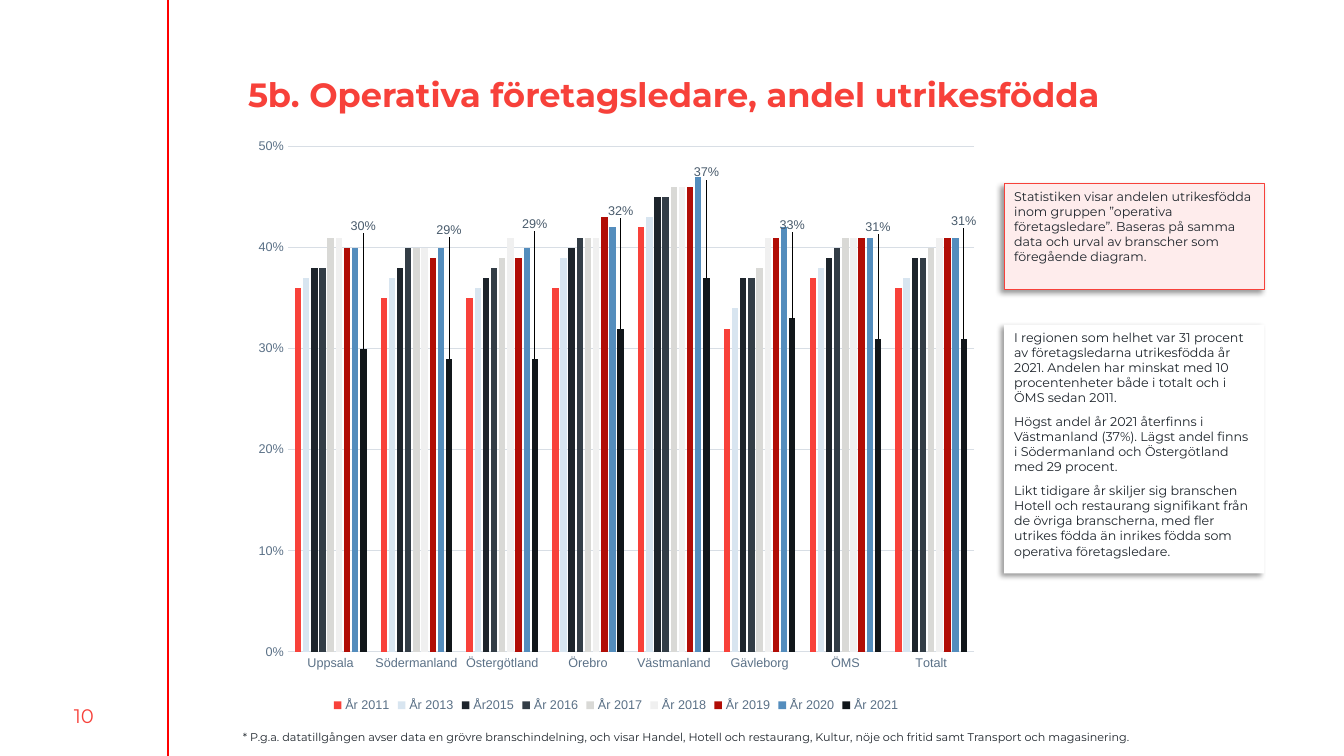
from dataclasses import dataclass

from lxml import etree
from pptx import Presentation
from pptx import util as u
from pptx.chart.data import CategoryChartData
from pptx.dml.color import RGBColor
from pptx.enum import chart as ch, shapes, text
from pptx.oxml import parse_xml
from pptx.oxml.ns import nsdecls, qn

TITLE = "5b. Operativa företagsledare, andel utrikesfödda"
PAGE_NUMBER = "10"
SOURCE_NOTE = ["Statistiken visar andelen utrikesfödda inom gruppen ”operativa företagsledare”. "
               "Baseras på samma data och urval av branscher som föregående diagram."]
FINDINGS = [
    "I regionen som helhet var 31 procent av företagsledarna utrikesfödda år 2021. "
    "Andelen har minskat med 10 procentenheter både i totalt och i ÖMS sedan 2011.",
    "Högst andel år 2021 återfinns i Västmanland (37%). Lägst andel finns i Södermanland "
    "och Östergötland med 29 procent.",
    "Likt tidigare år skiljer sig branschen Hotell och restaurang signifikant från de övriga "
    "branscherna, med fler utrikes födda än inrikes födda som operativa företagsledare.",
]
FOOTNOTE = ["* P.g.a. datatillgången avser data en grövre branschindelning, och visar Handel, "
            "Hotell och restaurang, Kultur, nöje och fritid samt Transport och magasinering."]

REGIONS = ["Uppsala", "Södermanland", "Östergötland", "Örebro",
           "Västmanland", "Gävleborg", "ÖMS", "Totalt"]
YEARS = [  # name, colour, percent per region
    ("År 2011", "F8413A", [36, 35, 35, 36, 42, 32, 37, 36]),
    ("År 2013", "D8E5F0", [37, 37, 36, 39, 43, 34, 38, 37]),
    ("År2015", "1D242B", [38, 38, 37, 40, 45, 37, 39, 39]),
    ("År 2016", "333D46", [38, 40, 38, 41, 45, 37, 40, 39]),
    ("År 2017", "D9D9D6", [41, 40, 39, 41, 46, 38, 41, 40]),
    ("År 2018", "F0F0F0", [41, 40, 41, 41, 46, 41, 41, 41]),
    ("År 2019", "B10D06", [40, 39, 39, 43, 46, 41, 41, 41]),
    ("År 2020", "548DBD", [40, 40, 40, 42, 47, 42, 41, 41]),
    ("År 2021", "11161A", [30, 29, 29, 32, 37, 33, 31, 31]),
]
# How far each 2021 label is raised, as a share of the chart's height
LABEL_LIFTS = [0.19, 0.2, 0.21, 0.18, 0.16, 0.14, 0.17, 0.18]
PLOT_AREA = {"x": 0.06, "y": 0.03, "w": 0.92, "h": 0.86}


@dataclass(frozen=True)
class Theme:
    accent: str = "F7413A"
    tint: str = "FEECEC"
    paper: str = "FFFFFF"
    ink: str = "1D242B"
    rule: str = "FF0000"
    axis: str = "5B7187"
    grid: str = "D8DEE5"
    value: str = "495B6C"
    face: str = "Montserrat"
    chart_face: str = "Arial"
    title: int = 24
    page: int = 14
    chart: int = 10
    body: int = 9
    foot: int = 8


T = Theme()
WIDTH, HEIGHT = 13.33, 7.5
RULE_X = WIDTH / 8
CONTENT_X = 2.41
SIDE_X, SIDE_W = 9.96, 2.58


def box(*inches):
    return [u.Inches(length) for length in inches]


def style(font, size, color, face=T.face, bold=None):
    font.size, font.name, font.bold = u.Pt(size), face, bold
    font.color.rgb = RGBColor.from_string(color)


def stroke(line, color, width=0.75):
    line.color.rgb = RGBColor.from_string(color)
    line.width = u.Pt(width)


def write(shape, paragraphs, size, color=T.ink, inset=0.1, align=text.PP_ALIGN.LEFT,
          anchor=text.MSO_ANCHOR.TOP, bold=None):
    frame = shape.text_frame
    frame.word_wrap, frame.auto_size = True, text.MSO_AUTO_SIZE.NONE
    frame.vertical_anchor = anchor
    frame.margin_left = frame.margin_right = u.Inches(inset)
    frame.margin_top = frame.margin_bottom = u.Inches(0.05)
    frame.text = "\n".join(paragraphs)
    for paragraph in frame.paragraphs:
        paragraph.alignment = align
        paragraph.space_after = u.Pt(6)
        style(paragraph.font, size, color, bold=bold)


def add_panel(slide, top, height, fill, paragraphs, border=None):
    panel = slide.shapes.add_shape(shapes.MSO_SHAPE.RECTANGLE, *box(SIDE_X, top, SIDE_W, height))
    panel.fill.solid()
    panel.fill.fore_color.rgb = RGBColor.from_string(fill)
    if border:
        stroke(panel.line, border, 1)
    else:
        panel.line.fill.background()
    panel.shadow.inherit = False
    panel._element.spPr.find(qn("a:effectLst")).append(parse_xml(
        f'<a:outerShdw {nsdecls("a")} blurRad="{u.Pt(4)}" dist="{u.Pt(3)}" dir="{135 * 60000}" '
        'algn="tr" rotWithShape="0"><a:srgbClr val="000000"><a:alpha val="40000"/></a:srgbClr>'
        '</a:outerShdw>'))
    write(panel, paragraphs, T.body)


def manual_layout(inner=False, **places):
    target = '<c:layoutTarget val="inner"/>' if inner else ""
    modes = "".join(f'<c:{k}Mode val="edge"/>' for k in "xy") if inner else ""
    values = "".join(f'<c:{k} val="{v}"/>' for k, v in places.items())
    return parse_xml(f'<c:layout {nsdecls("c")}><c:manualLayout>{target}{modes}{values}'
                     '</c:manualLayout></c:layout>')


def style_axes(chart):
    for axis in (chart.category_axis, chart.value_axis):
        axis.major_tick_mark = axis.minor_tick_mark = ch.XL_TICK_MARK.NONE
        style(axis.tick_labels.font, T.body, T.axis, T.chart_face)
    stroke(chart.category_axis.format.line, T.grid)
    share = chart.value_axis
    share.minimum_scale, share.maximum_scale, share.major_unit = 0, 0.5, 0.1
    share.format.line.fill.background()
    share.has_major_gridlines = True
    stroke(share.major_gridlines.format.line, T.grid)
    share.tick_labels.number_format = "0%"
    share.tick_labels.number_format_is_linked = False


def add_region_chart(slide):
    data = CategoryChartData(number_format="0%")
    data.categories = REGIONS
    for name, _, percents in YEARS:
        data.add_series(name, [percent / 100 for percent in percents])
    chart = slide.shapes.add_chart(ch.XL_CHART_TYPE.COLUMN_CLUSTERED,
                                   *box(CONTENT_X, 1.28, 7.4, 5.83), data).chart
    chart.has_title = False
    style(chart.font, T.chart, T.ink, T.chart_face)
    style_axes(chart)
    chart.has_legend = True
    chart.legend.position = ch.XL_LEGEND_POSITION.BOTTOM
    chart.legend.include_in_layout = False
    style(chart.legend.font, T.body, T.axis, T.chart_face)

    columns = chart.plots[0]
    columns.gap_width, columns.overlap, columns.vary_by_categories = 219, -27, False
    for year, (_, color, _) in zip(columns.series, YEARS):
        year.format.fill.solid()
        year.format.fill.fore_color.rgb = RGBColor.from_string(color)
        year.invert_if_negative = False

    latest = columns.series[len(YEARS) - 1]
    for index, lift in enumerate(LABEL_LIFTS):
        label = latest.points[index].data_label
        label.position = ch.XL_LABEL_POSITION.OUTSIDE_END
        style(label.font, T.body, T.value, T.chart_face)
    for element, lift in zip(latest._element.iter(qn("c:dLbl")), LABEL_LIFTS):
        element.find(qn("c:idx")).addnext(manual_layout(x=0, y=-lift))

    plot_area = chart._chartSpace.chart.plotArea
    for layout in plot_area.findall(qn("c:layout")):
        plot_area.remove(layout)
    plot_area.insert(0, manual_layout(inner=True, **PLOT_AREA))


def main():
    deck = Presentation()
    deck.slide_width, deck.slide_height = box(WIDTH, HEIGHT)
    slide = deck.slides.add_slide(deck.slide_layouts[5])

    page = slide.shapes.add_textbox(*box(0, 6.9, RULE_X, 0.4))
    write(page, [PAGE_NUMBER], T.page, T.accent, align=text.PP_ALIGN.CENTER,
          anchor=text.MSO_ANCHOR.MIDDLE)
    page.text_frame.paragraphs[0].space_after = u.Pt(0)
    rule = slide.shapes.add_connector(shapes.MSO_CONNECTOR.STRAIGHT,
                                      *box(RULE_X, 0, RULE_X, HEIGHT))
    stroke(rule.line, T.rule)
    etree.SubElement(rule._element.spPr, qn("a:effectLst"))

    title = slide.shapes.title
    title.left, title.top, title.width, title.height = box(CONTENT_X, 0.68, WIDTH - CONTENT_X, 0.89)
    write(title, [TITLE], T.title, T.accent, inset=0.05, bold=True)

    add_panel(slide, 1.82, 1.05, T.tint, SOURCE_NOTE, T.accent)
    add_panel(slide, 3.22, 2.47, T.paper, FINDINGS)
    write(slide.shapes.add_textbox(*box(CONTENT_X, 7.2, 10.12, 0.19)), FOOTNOTE, T.foot, inset=0)
    add_region_chart(slide)
    deck.save("out.pptx")


if __name__ == "__main__":
    main()
